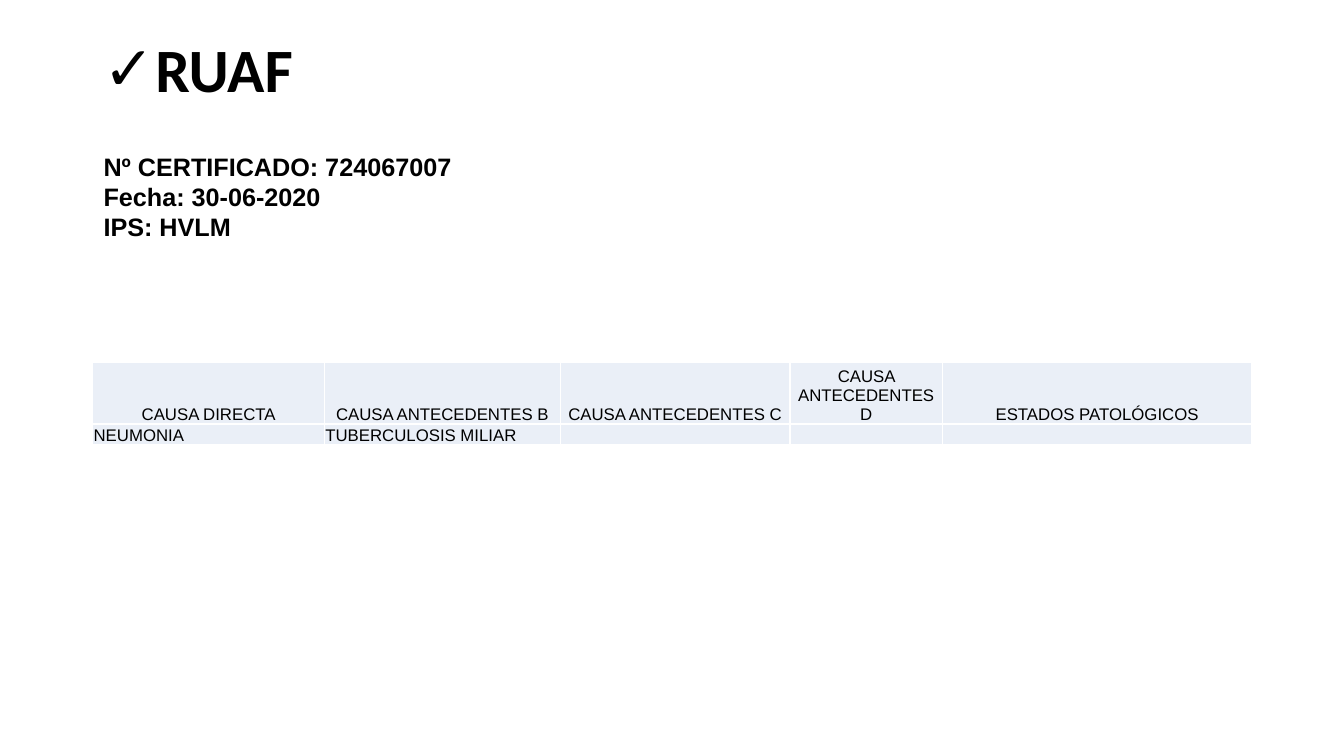
from lxml.etree import SubElement
from pptx import Presentation
from pptx.dml.color import RGBColor
from pptx.enum.text import MSO_ANCHOR, PP_ALIGN
from pptx.oxml.ns import qn
from pptx.util import Cm, Pt

BLACK = RGBColor(0x00, 0x00, 0x00)
WHITE = RGBColor(0xFF, 0xFF, 0xFF)
PALE = RGBColor(0xEA, 0xEF, 0xF7)

FACTS = ["Nº CERTIFICADO: 724067007", "Fecha: 30-06-2020", "IPS: HVLM"]
CAUSES = [
    ["CAUSA DIRECTA", "CAUSA ANTECEDENTES B", "CAUSA ANTECEDENTES C",
     "CAUSA ANTECEDENTES D", "ESTADOS PATOLÓGICOS"],
    ["NEUMONIA", "TUBERCULOSIS MILIAR", "", "", ""],
]
WIDTHS = [5.84, 5.94, 5.79, 3.84, 7.8]
HEIGHTS = [1.54, 0.53]


def add_text(para, text, size, face="Arial", bold=False):
    """Add one black run to a paragraph."""
    run = para.add_run()
    run.text = text
    font = run.font
    font.name, font.size, font.bold = face, Pt(size), bold
    font.color.rgb = BLACK


def add_title(slide, left, top, width, height):
    """Place the ticked heading in the title placeholder."""
    title = slide.shapes.title
    title.left, title.top = Cm(left), Cm(top)
    title.width, title.height = Cm(width), Cm(height)
    frame = title.text_frame
    frame.word_wrap = True
    frame.vertical_anchor = MSO_ANCHOR.MIDDLE
    para = frame.paragraphs[0]
    para.alignment = PP_ALIGN.LEFT
    para.line_spacing = 0.9
    props = para._p.get_or_add_pPr()
    props.set("marL", str(Cm(0.79)))
    props.set("indent", str(-Cm(0.79)))
    SubElement(props, qn("a:buFont"), typeface="Arial")
    SubElement(props, qn("a:buChar"), char="✓")
    add_text(para, "RUAF", 44, "Calibri", True)


def add_facts(slide, left, top, width, height):
    """List the certificate facts, one per paragraph."""
    box = slide.shapes.add_textbox(Cm(left), Cm(top), Cm(width), Cm(height))
    frame = box.text_frame
    frame.word_wrap = True
    for i, fact in enumerate(FACTS):
        para = frame.add_paragraph() if i else frame.paragraphs[0]
        add_text(para, fact, 18, bold=True)


def style_cell(cell):
    """Give a cell its white borders, pale fill and thin margins."""
    props = cell._tc.get_or_add_tcPr()
    for side in ("lnL", "lnR", "lnT", "lnB"):
        line = SubElement(props, qn(f"a:{side}"), w=str(Pt(1)))
        fill = SubElement(line, qn("a:solidFill"))
        SubElement(fill, qn("a:srgbClr"), val=str(WHITE))
    cell.fill.solid()
    cell.fill.fore_color.rgb = PALE
    cell.vertical_anchor = MSO_ANCHOR.BOTTOM
    cell.margin_left = cell.margin_right = cell.margin_top = Cm(0.02)
    cell.margin_bottom = 0


def add_causes(slide, left, top, width, height):
    """Build the table of causes of death."""
    frame = slide.shapes.add_table(len(CAUSES), len(WIDTHS), Cm(left),
                                   Cm(top), Cm(width), Cm(height))
    table = frame.table
    table.first_row = table.horz_banding = False
    for col, size in zip(table.columns, WIDTHS):
        col.width = Cm(size)
    for r, words in enumerate(CAUSES):
        table.rows[r].height = Cm(HEIGHTS[r])
        for c, word in enumerate(words):
            cell = table.cell(r, c)
            style_cell(cell)
            para = cell.text_frame.paragraphs[0]
            para.alignment = PP_ALIGN.LEFT if r else PP_ALIGN.CENTER
            if word:
                add_text(para, word, 12)
            else:
                SubElement(para._p, qn("a:endParaRPr"), sz="1200")


def main():
    """Build and save the slide."""
    deck = Presentation()
    deck.slide_width, deck.slide_height = Cm(33.87), Cm(19.05)
    slide = deck.slides.add_slide(deck.slide_layouts[5])
    slide.background.fill.solid()
    slide.background.fill.fore_color.rgb = WHITE
    add_title(slide, 2.36, 0, 29.21, 3.68)
    add_facts(slide, 2.36, 3.68, 24.13, 2.57)
    add_causes(slide, 2.34, 9.14, sum(WIDTHS), sum(HEIGHTS))
    deck.save("out.pptx")


if __name__ == "__main__":
    main()
